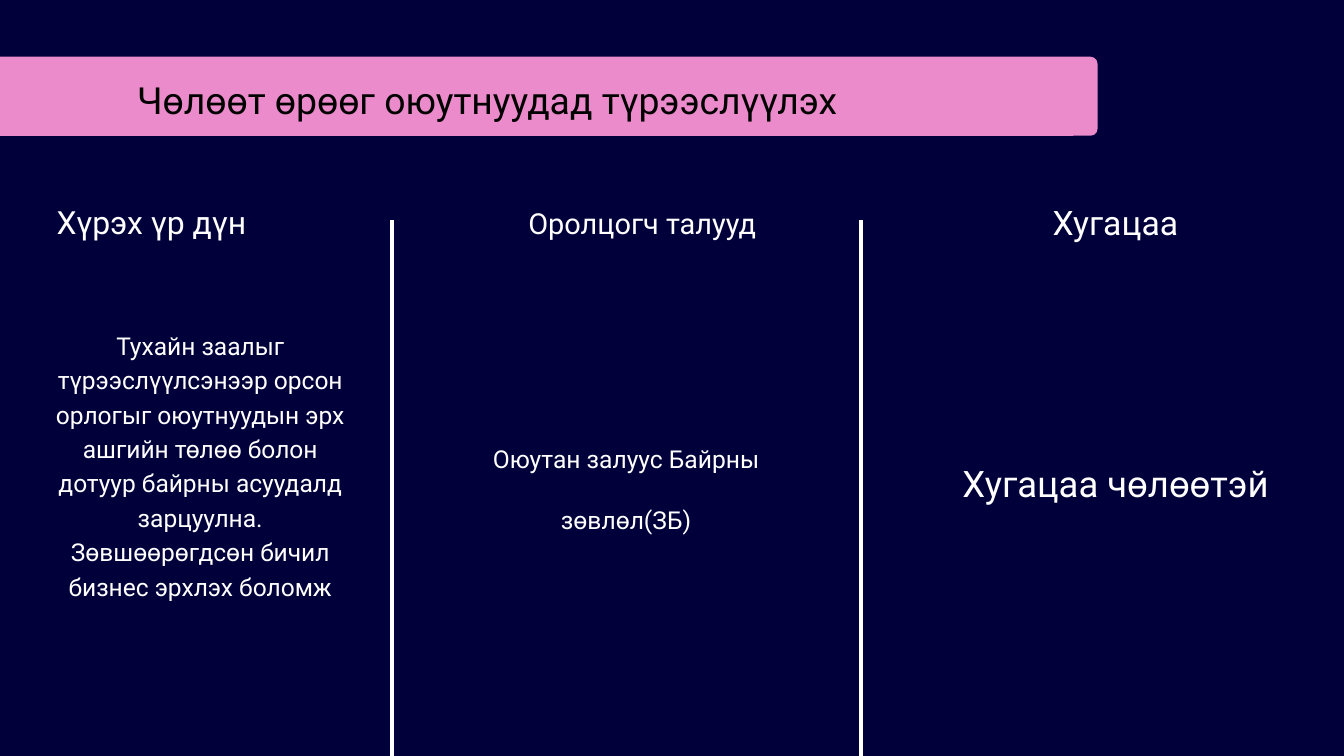
from dataclasses import dataclass

from lxml.etree import SubElement
from pptx import Presentation
from pptx.dml.color import RGBColor
from pptx.enum.shapes import MSO_CONNECTOR, MSO_SHAPE
from pptx.enum.text import MSO_ANCHOR, MSO_AUTO_SIZE, PP_ALIGN
from pptx.oxml.ns import qn
from pptx.util import Pt


@dataclass(frozen=True)
class Theme:
    font: str = "Roboto"
    background: RGBColor = RGBColor(0x01, 0x00, 0x3B)
    banner: RGBColor = RGBColor(0xEB, 0x8B, 0xCB)
    light: RGBColor = RGBColor(0xFF, 0xFF, 0xFF)
    dark: RGBColor = RGBColor(0x00, 0x00, 0x00)
    title_size: float = 40
    result_heading_size: float = 34.2
    parties_heading_size: float = 31
    time_heading_size: float = 36.1
    result_size: float = 26.3
    parties_size: float = 26.4
    time_size: float = 39.1
    divider_width: float = 5.25


def px(*lengths):
    return [length * 9525 for length in lengths]


def write_text(shape, text, size, line_height, color):
    text_frame = shape.text_frame
    text_frame.text = text
    text_frame.word_wrap = True
    text_frame.auto_size = MSO_AUTO_SIZE.NONE
    text_frame.vertical_anchor = MSO_ANCHOR.TOP
    text_frame.margin_left = text_frame.margin_right = 0
    text_frame.margin_top = text_frame.margin_bottom = 0
    paragraph = text_frame.paragraphs[0]
    paragraph.alignment = PP_ALIGN.CENTER
    paragraph.line_spacing = Pt(line_height)
    paragraph.space_before = Pt(0)
    font = paragraph.runs[0].font
    font.name = theme.font
    font.size = Pt(size)
    font.color.rgb = color


theme = Theme()
presentation = Presentation()
presentation.slide_width, presentation.slide_height = px(1920, 1080)
slide = presentation.slides.add_slide(presentation.slide_layouts[5])
slide.background.fill.solid()
slide.background.fill.fore_color.rgb = theme.background

for divider_x in (1230, 560):
    divider = slide.shapes.add_connector(
        MSO_CONNECTOR.STRAIGHT, *px(divider_x, 1394, divider_x, 314)
    )
    divider.line.color.rgb = theme.light
    divider.line.width = Pt(theme.divider_width)
    SubElement(divider.element.spPr, qn("a:effectLst"))

banner = slide.shapes.add_shape(MSO_SHAPE.ROUNDED_RECTANGLE, *px(-68, 81, 1636, 113))
banner.adjustments[0] = 0.09
banner.shadow.inherit = False
banner.fill.solid()
banner.fill.fore_color.rgb = theme.banner
banner.line.fill.background()

title = slide.shapes.title
title.left, title.top, title.width, title.height = px(40, 99, 1312, 72)
write_text(title, "Чөлөөт өрөөг оюутнуудад түрээслүүлэх", theme.title_size, 56.1, theme.dark)
banner.element.addnext(title.element)

column_texts = [
    ("Хүрэх үр дүн", (67, 280, 299, 60), theme.result_heading_size, 47.8),
    ("Оролцогч талууд", (697, 285, 441, 56), theme.parties_heading_size, 43.4),
    ("Хугацаа", (1434, 279, 319, 65), theme.time_heading_size, 50.6),
    (
        "Тухайн заалыг түрээслүүлсэнээр орсон орлогыг оюутнуудын эрх ашгийн төлөө "
        "болон дотуур байрны асуудалд зарцуулна. Зөвшөөрөгдсөн бичил бизнес эрхлэх боломж",
        (67, 466, 438, 390), theme.result_size, 36.8,
    ),
    ("Оюутан залуус Байрны зөвлөл(ЗБ)", (700, 588, 389, 165), theme.parties_size, 66),
    ("Хугацаа чөлөөтэй", (1349, 648, 490, 70), theme.time_size, 54.7),
]
for text, box, size, line_height in column_texts:
    text_box = slide.shapes.add_textbox(*px(*box))
    write_text(text_box, text, size, line_height, theme.light)

presentation.save("out.pptx")
